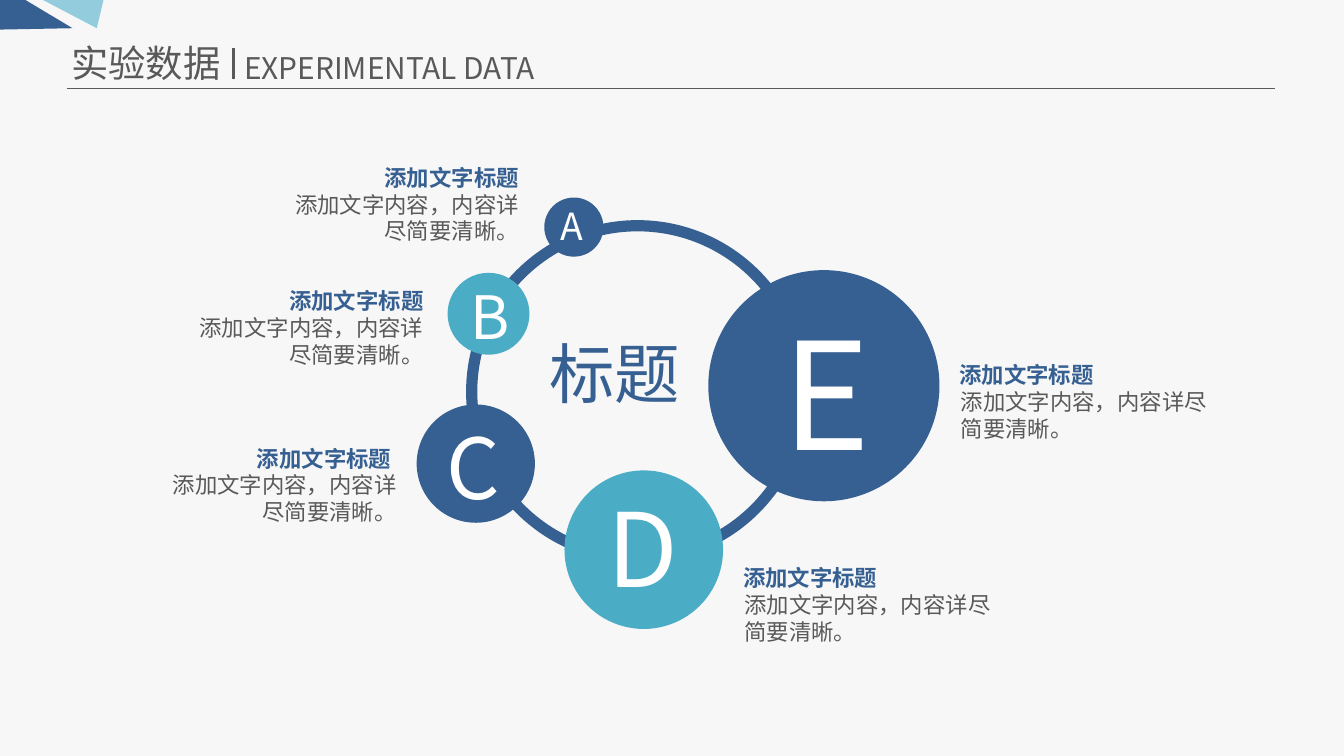
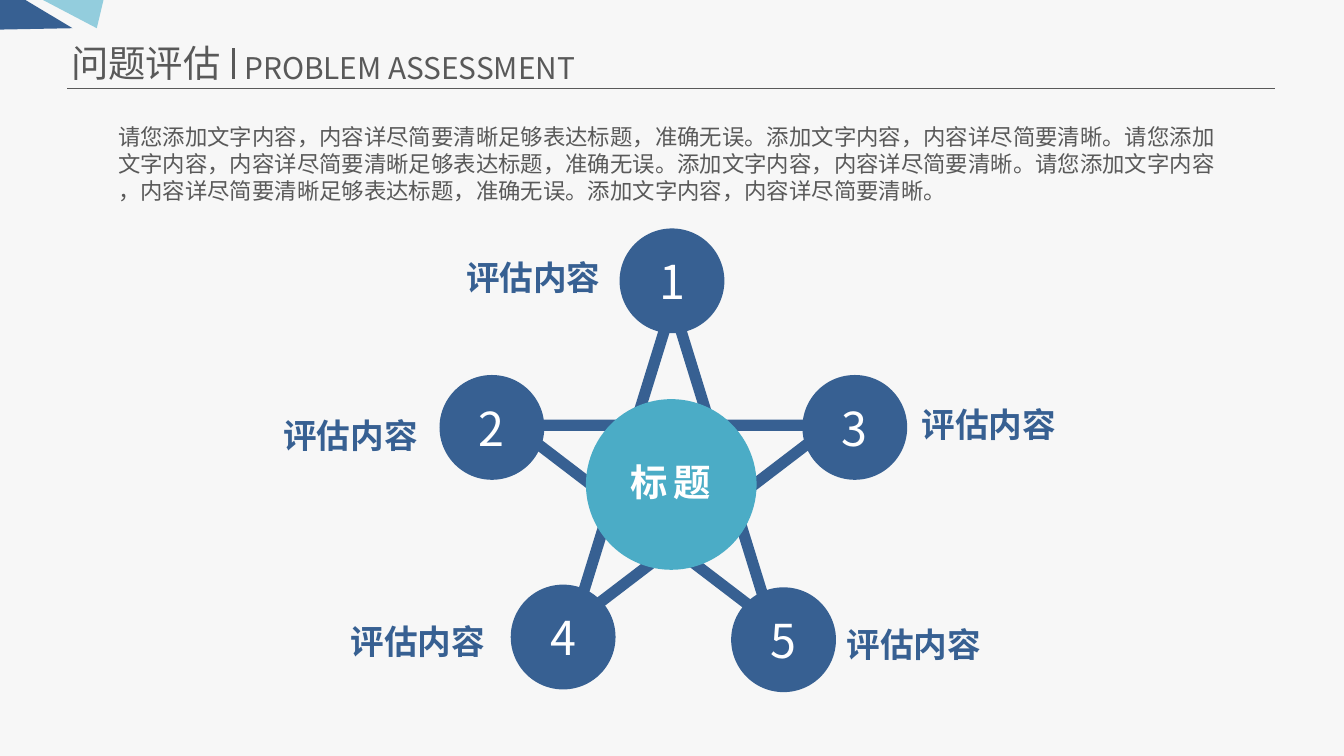
from lxml.etree import SubElement
from pptx import Presentation
from pptx.dml.color import RGBColor
from pptx.enum.shapes import MSO_CONNECTOR, MSO_SHAPE
from pptx.enum.text import MSO_ANCHOR, MSO_AUTO_SIZE, PP_ALIGN
from pptx.oxml.ns import qn
from pptx.util import Inches, Pt

FONT = "Noto Sans CJK SC"
LINE_HEIGHT = 1.2
COLORS = {
    "background": "F7F7F7",
    "navy": "376092",
    "teal": "4BACC6",
    "sky": "93CDDD",
    "gray": "595959",
    "white": "FFFFFF",
}
LEFT, CENTER, RIGHT = PP_ALIGN.LEFT, PP_ALIGN.CENTER, PP_ALIGN.RIGHT
CALLOUT_HEADING = "添加文字标题"
CALLOUT_BODY = "添加文字内容，内容详尽简要清晰。"


def color(name):
    return RGBColor.from_string(COLORS[name])


def format_text(text_frame, size, color_name, bold=False, align=LEFT, spacing=None):
    for paragraph in text_frame.paragraphs:
        paragraph.alignment = align
        paragraph.line_spacing = Pt(size * LINE_HEIGHT)
        for run in paragraph.runs:
            run.font.name = FONT
            run.font.size = Pt(size)
            run.font.bold = bold
            run.font.color.rgb = color(color_name)
            properties = run.font._element
            SubElement(properties, qn("a:ea")).set("typeface", FONT)
            if spacing:
                properties.set("spc", str(spacing * 100))


def add_text(slide, text, left, top, width, height, size, color_name,
             wrap=False, **style):
    box = slide.shapes.add_textbox(
        Inches(left), Inches(top), Inches(width), Inches(height))
    text_frame = box.text_frame
    text_frame.text = text
    text_frame.word_wrap = wrap
    text_frame.auto_size = MSO_AUTO_SIZE.SHAPE_TO_FIT_TEXT
    format_text(text_frame, size, color_name, **style)


def add_outline(slide, kind, left, top, size):
    shape = slide.shapes.add_shape(
        kind, Inches(left), Inches(top), Inches(size), Inches(size))
    shape.shadow.inherit = False
    shape.fill.background()
    shape.line.color.rgb = color("navy")
    shape.line.width = Pt(6)


def add_circle(slide, left, top, diameter, color_name):
    circle = slide.shapes.add_shape(
        MSO_SHAPE.OVAL, Inches(left), Inches(top), Inches(diameter), Inches(diameter))
    circle.shadow.inherit = False
    circle.fill.solid()
    circle.fill.fore_color.rgb = color(color_name)
    circle.line.fill.background()
    return circle


def add_line(slide, start, end, width):
    line = slide.shapes.add_connector(
        MSO_CONNECTOR.STRAIGHT, *(Inches(value) for value in start + end))
    line.line.color.rgb = color("gray")
    line.line.width = Pt(width)
    SubElement(line._element.spPr, qn("a:effectLst"))


def add_polygon(slide, points, color_name):
    corners = [(Inches(x), Inches(y)) for x, y in points]
    builder = slide.shapes.build_freeform(*corners[0], scale=1.0)
    builder.add_line_segments(corners[1:], close=True)
    shape = builder.convert_to_shape()
    shape.shadow.inherit = False
    shape.fill.solid()
    shape.fill.fore_color.rgb = color(color_name)
    shape.line.fill.background()


def add_base_slide(presentation, title, subtitle, subtitle_width):
    slide = presentation.slides.add_slide(presentation.slide_layouts[6])
    slide.background.fill.solid()
    slide.background.fill.fore_color.rgb = color("background")
    # Header rule and corner decoration
    add_line(slide, (0.5, 0.66), (9.49, 0.66), 0.75)
    add_polygon(slide, [(0.32, 0), (0.72, 0.21), (0.77, 0)], "sky")
    add_polygon(slide, [(0.54, 0.21), (0.19, 0), (0, 0), (0, 0.22)], "navy")
    # Bilingual title
    add_text(slide, title, 0.43, 0.25, 1.32, 0.44, 20, "gray")
    add_text(slide, subtitle, 1.72, 0.32, subtitle_width, 0.37, 16, "gray")
    add_line(slide, (1.74, 0.36), (1.74, 0.59), 1.5)
    return slide


def add_callout(slide, heading_left, body_left, top, body_width, align):
    add_text(slide, CALLOUT_HEADING, heading_left, top, 1.21, 0.3, 12, "navy",
             bold=True, align=align)
    add_text(slide, CALLOUT_BODY, body_left, top + 0.2, body_width, 0.5, 12, "gray",
             wrap=True, align=align)


def add_data_slide(presentation):
    slide = add_base_slide(presentation, "实验数据", "EXPERIMENTAL DATA", 2.49)
    add_outline(slide, MSO_SHAPE.OVAL, 3.51, 1.68, 2.47)

    # Lettered circles: circle left, top, diameter, fill; letter box and size
    bubbles = [
        ("C", (3.1, 3.01, 0.88, "navy"), (3.22, 3.04, 0.62, 0.86, 45)),
        ("D", (4.2, 3.5, 1.18, "teal"), (4.42, 3.56, 0.79, 1.03, 55)),
        ("B", (3.33, 2.03, 0.61, "teal"), (3.4, 2.03, 0.48, 0.64, 32)),
        ("A", (4.05, 1.47, 0.44, "navy"), (4.07, 1.46, 0.29, 0.31, 20)),
        ("E", (5.27, 2.01, 1.72, "navy"), (5.72, 2.19, 0.82, 1.45, 80)),
    ]
    for letter, circle, letter_box in bubbles:
        add_circle(slide, *circle)
        add_text(slide, letter, *letter_box, "white")
    add_text(slide, "标题", 3.87, 2.43, 1.41, 0.69, 35, "navy",
             wrap=True, align=CENTER)

    # Callouts: heading left, body left, top, body width, alignment
    callouts = [
        (2.75, 2.02, 1.17, 1.94, RIGHT),
        (2.04, 1.31, 2.09, 1.94, RIGHT),
        (1.8, 1.11, 3.26, 1.94, RIGHT),
        (5.43, 5.44, 4.15, 2.16, LEFT),
        (7.04, 7.05, 2.64, 2.14, LEFT),
    ]
    for callout in callouts:
        add_callout(slide, *callout)


def add_assessment_slide(presentation):
    slide = add_base_slide(presentation, "问题评估", "PROBLEM ASSESSMENT", 2.78)
    introduction = [
        "请您添加文字内容，内容详尽简要清晰足够表达标题，准确无误。添加文字内容，内容详尽简要清晰。请您添加",
        "文字内容，内容详尽简要清晰足够表达标题，准确无误。添加文字内容，内容详尽简要清晰。请您添加文字内容",
        "，内容详尽简要清晰足够表达标题，准确无误。添加文字内容，内容详尽简要清晰。",
    ]
    add_text(slide, "\n".join(introduction), 0.78, 0.87, 8.45, 0.71, 12, "gray")

    # Star with its centre
    add_outline(slide, MSO_SHAPE.STAR_5_POINT, 3.82, 2.26, 2.37)
    add_circle(slide, 4.36, 2.97, 1.27, "teal")
    add_text(slide, "标题", 4.59, 3.37, 0.85, 0.44, 20, "white", bold=True, spacing=3)

    # Numbered points: circle position, label position
    points = [
        ((4.61, 1.7), (3.37, 1.86)),
        ((3.27, 2.79), (2.01, 3.04)),
        ((5.97, 2.79), (6.76, 2.96)),
        ((3.8, 4.35), (2.51, 4.57)),
        ((5.44, 4.37), (6.2, 4.59)),
    ]
    for number, (circle_position, label_position) in enumerate(points, start=1):
        circle = add_circle(slide, *circle_position, 0.78, "navy")
        circle.text_frame.text = str(number)
        circle.text_frame.vertical_anchor = MSO_ANCHOR.MIDDLE
        format_text(circle.text_frame, 25, "white", align=CENTER)
        add_text(slide, "评估内容", *label_position, 1.21, 0.4, 18, "navy", bold=True)


def main():
    presentation = Presentation()
    # Widescreen 16:9
    presentation.slide_width = Inches(10)
    presentation.slide_height = Inches(10) * 9 // 16
    add_data_slide(presentation)
    add_assessment_slide(presentation)
    presentation.save("out.pptx")


if __name__ == "__main__":
    main()
